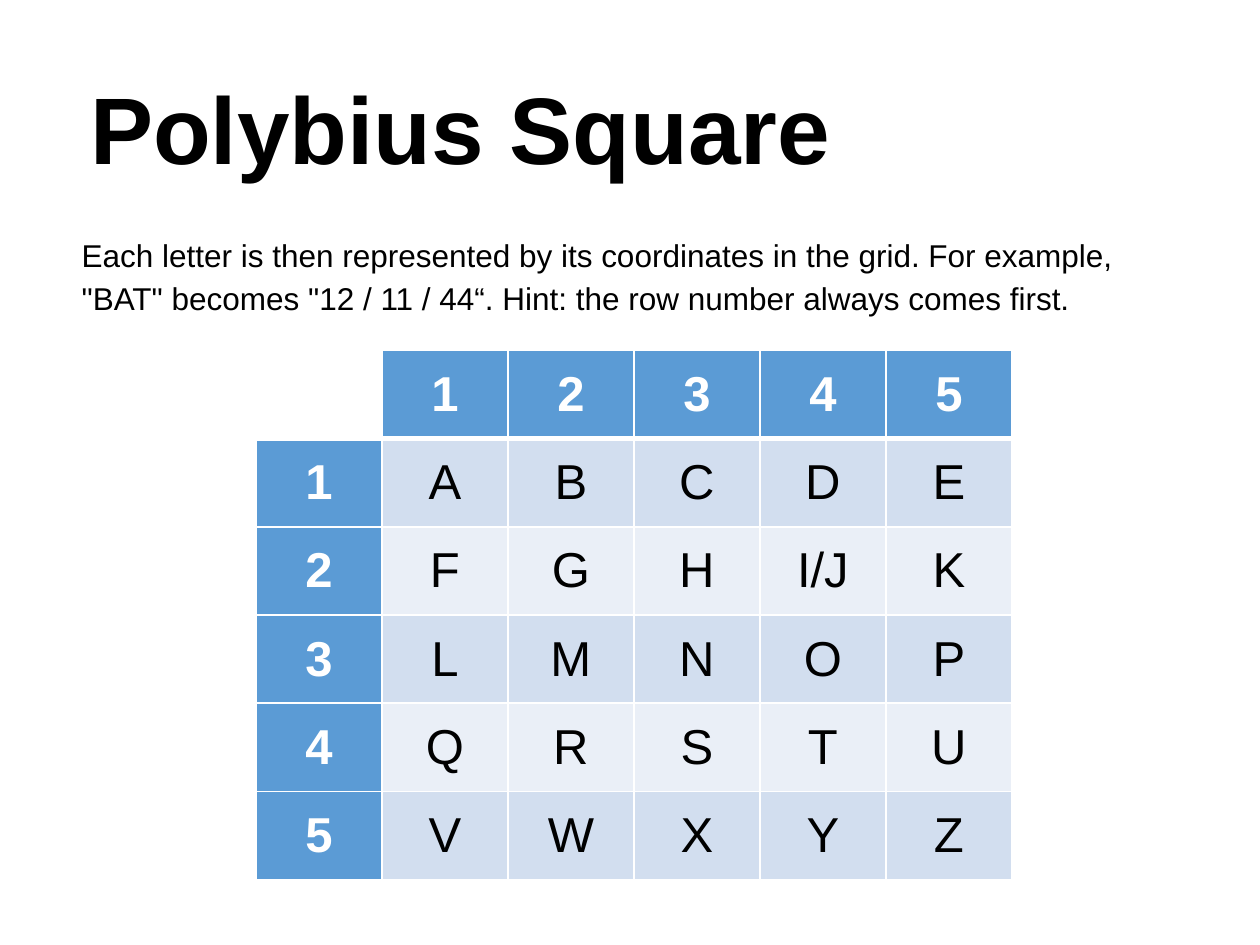
from dataclasses import dataclass

from lxml import etree
from pptx import Presentation
from pptx.dml.color import RGBColor
from pptx.enum import text
from pptx.oxml import ns
from pptx.util import Pt


@dataclass(frozen=True)
class Theme:
    font: str = "Arial"
    white: str = "FFFFFF"
    black: str = "000000"
    header: str = "5B9BD5"
    bands: tuple = ("D2DEEF", "EAEFF7")
    title_size: int = 54
    body_size: int = 18
    cell_size: int = 28


theme = Theme()


def style(para, size, color, bold=False):
    for span in para.runs:
        span.font.name = theme.font
        span.font.size = Pt(size)
        span.font.bold = bold
        span.font.color.rgb = RGBColor.from_string(color)


def add_border(cell, side, width):
    """Draw one cell edge ('L', 'R', 'T' or 'B') in white."""
    props = cell._tc.get_or_add_tcPr()
    line = etree.SubElement(props, ns.qn(f"a:ln{side}"), w=str(Pt(width)))
    fill = etree.SubElement(line, ns.qn("a:solidFill"))
    etree.SubElement(fill, ns.qn("a:srgbClr"), val=theme.white)


deck = Presentation()
deck.slide_width, deck.slide_height = Pt(720), Pt(540)
page = deck.slides.add_slide(deck.slide_layouts[6])

# Polybius grid: coordinates along the top and left, letters inside
letter_rows = ["A B C D E", "F G H I/J K", "L M N O P", "Q R S T U", "V W X Y Z"]
grid = [["", *"12345"]]
grid += [[str(number), *row.split()] for number, row in enumerate(letter_rows, 1)]
column_width, row_height = 72, 50.4
count = len(grid)
table = page.shapes.add_table(
    count, count, Pt(146.2), Pt(200.2), Pt(count * column_width), Pt(count * row_height)
).table
for column in table.columns:
    column.width = Pt(column_width)
for row in table.rows:
    row.height = Pt(row_height)

for r, values in enumerate(grid):
    for c, value in enumerate(values):
        cell = table.cell(r, c)
        is_header = r == 0 or c == 0
        cell.vertical_anchor = text.MSO_ANCHOR.MIDDLE
        for side in "LRTB":
            heavy = (r == 0 and side == "B") or (r == 1 and side == "T")
            add_border(cell, side, 3 if heavy else 1)
        if not value:
            cell.fill.background()
            continue
        cell.fill.solid()
        fill_color = theme.header if is_header else theme.bands[(r - 1) % 2]
        cell.fill.fore_color.rgb = RGBColor.from_string(fill_color)
        para = cell.text_frame.paragraphs[0]
        para.text = value
        para.alignment = text.PP_ALIGN.CENTER
        style(para, theme.cell_size, theme.white if is_header else theme.black, is_header)

# Explanation and title: left, top, width, height, wording, size, bold, spacing, before
explanation = (
    "Each letter is then represented by its coordinates in the grid. For example, "
    '"BAT" becomes "12 / 11 / 44“. Hint: the row number always comes first.'
)
text_boxes = [
    (39.6, 128.2, 645, 56.9, explanation, theme.body_size, False, 1.14, 0),
    (44.6, 43.9, 633.6, 53.3, "Polybius Square", theme.title_size, True, 0.9, 10),
]
for left, top, width, height, wording, size, bold, spacing, before in text_boxes:
    box = page.shapes.add_textbox(Pt(left), Pt(top), Pt(width), Pt(height))
    box.text_frame.word_wrap = True
    box.text_frame.text = wording
    para = box.text_frame.paragraphs[0]
    para.line_spacing = spacing
    para.space_before = Pt(before)
    style(para, size, theme.black, bold)

deck.save("out.pptx")
